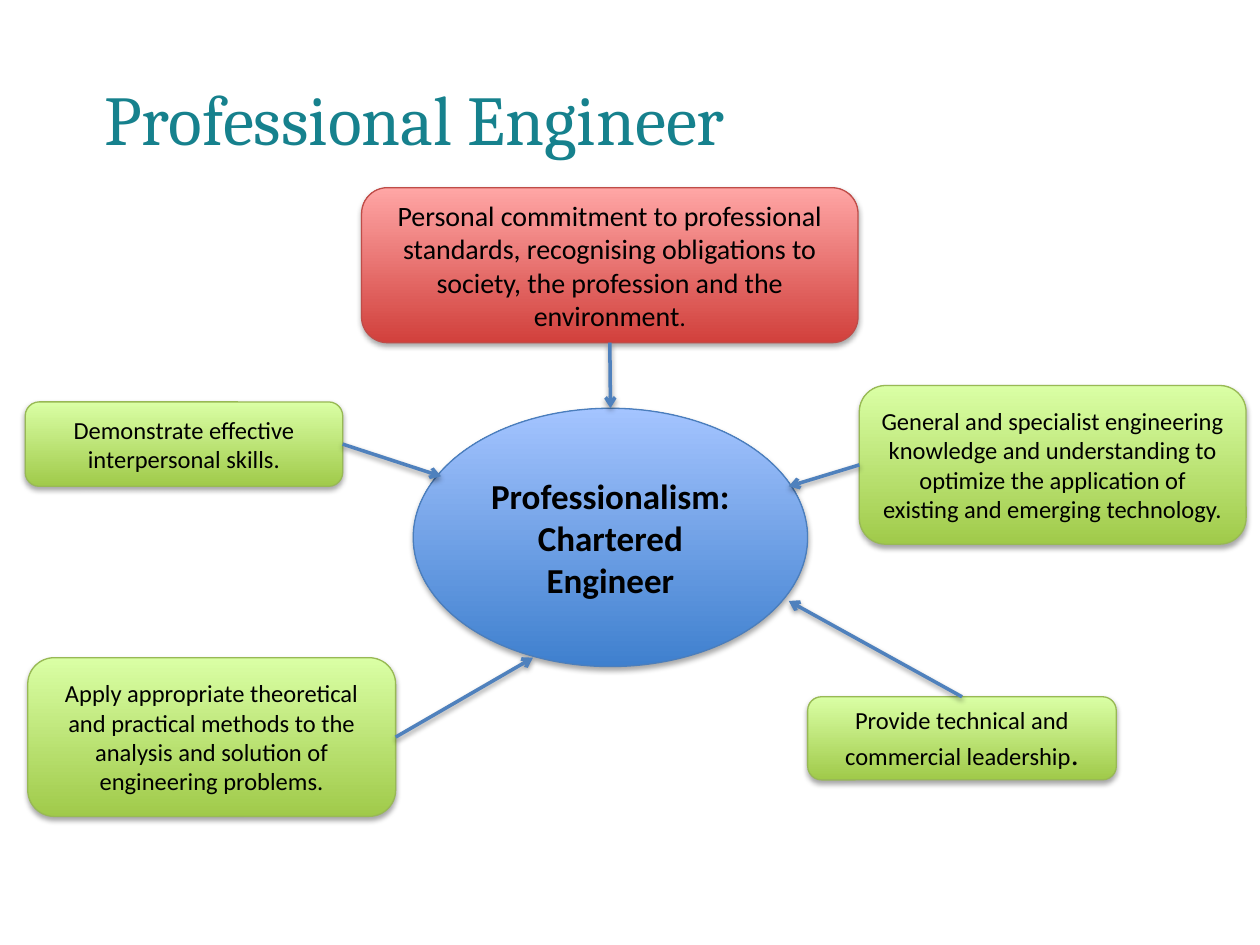
"""Build a slide showing the competences around a chartered engineer."""
from dataclasses import dataclass

from lxml import etree
from pptx import Presentation
from pptx.dml.color import RGBColor
from pptx.enum.shapes import MSO_CONNECTOR, MSO_SHAPE
from pptx.enum.text import MSO_ANCHOR, MSO_AUTO_SIZE, PP_ALIGN
from pptx.oxml.ns import qn
from pptx.shapes.autoshape import Shape
from pptx.slide import Slide
from pptx.util import Inches, Pt

OVAL, ROUNDED = MSO_SHAPE.OVAL, MSO_SHAPE.ROUNDED_RECTANGLE
STRAIGHT = MSO_CONNECTOR.STRAIGHT
TOP, MIDDLE = MSO_ANCHOR.TOP, MSO_ANCHOR.MIDDLE
LEFT, CENTER = PP_ALIGN.LEFT, PP_ALIGN.CENTER
NO_FIT = MSO_AUTO_SIZE.NONE
TITLE_ONLY = 5
SIDE_TOP, SIDE_LEFT, SIDE_BOTTOM, SIDE_RIGHT = range(4)


@dataclass(frozen=True)
class Palette:
    """Gradient from bottom to top, and outline."""
    bottom: str
    top: str
    outline: str


@dataclass(frozen=True)
class Theme:
    """Colours, fonts and type sizes of the slide."""
    blue: Palette = Palette("3F80CE", "A4C4FF", "4B7EBC")
    green: Palette = Palette("A0CA4A", "DAFFA5", "98B955")
    red: Palette = Palette("D1403C", "FFA6A5", "BF4C48")
    title: str = "16818D"
    text: str = "000000"
    arrow: str = "4F81BD"
    shadow: str = "000000"
    title_font: str = "Cambria"
    body_font: str = "Calibri"
    title_size: int = 40
    hub_size: int = 20
    commitment_size: int = 16
    large_stop_size: int = 18
    skill_size: int = 14


THEME = Theme()


@dataclass(frozen=True)
class Bubble:
    """A filled shape with centred text and an optional differently sized full stop."""
    text: str
    box: tuple[float, float, float, float]
    palette: Palette = THEME.green
    size: int = THEME.skill_size
    geometry: MSO_SHAPE = ROUNDED
    bold: bool = False
    stop_size: int | None = None


@dataclass(frozen=True)
class Competence:
    """A bubble and the arrow that leads from its side to the hub."""
    bubble: Bubble
    side: int
    target: tuple[float, float]


HUB = Bubble("Professionalism: Chartered Engineer", (3.28, 3.24, 3.13, 2.05),
             THEME.blue, THEME.hub_size, OVAL, bold=True)
COMMITMENT = Bubble(
    "Personal commitment to professional standards, recognising obligations "
    "to society, the profession and the environment",
    (2.87, 1.49, 3.94, 1.23), THEME.red, THEME.commitment_size,
    stop_size=THEME.skill_size)
COMPETENCES = [
    Competence(Bubble(
        "General and specialist engineering knowledge and understanding to "
        "optimize the application of existing and emerging technology.",
        (6.82, 3.06, 3.07, 1.26)), SIDE_LEFT, (6.26, 3.86)),
    Competence(Bubble(
        "Apply appropriate theoretical and practical methods to the analysis "
        "and solution of engineering problems.",
        (0.22, 5.22, 2.92, 1.26)), SIDE_RIGHT, (4.23, 5.22)),
    Competence(Bubble(
        "Provide technical and commercial leadership", (6.41, 5.53, 2.45, 0.66),
        stop_size=THEME.large_stop_size), SIDE_TOP, (6.26, 4.77)),
    Competence(Bubble(
        "Demonstrate effective interpersonal skills.", (0.2, 3.19, 2.52, 0.67)),
        SIDE_RIGHT, (3.5, 3.78)),
]


def rgb(code: str) -> RGBColor:
    """Turn a hexadecimal code into a colour."""
    return RGBColor.from_string(code)


def add_shadow(properties: etree._Element, distance: float, opacity: int) -> None:
    """Give a shape or connector a soft shadow below it."""
    effects = etree.SubElement(properties, qn("a:effectLst"))
    outer = etree.SubElement(effects, qn("a:outerShdw"), blurRad=str(Pt(3.15)),
                             dist=str(Pt(distance)), dir="5400000", rotWithShape="0")
    color = etree.SubElement(outer, qn("a:srgbClr"), val=THEME.shadow)
    etree.SubElement(color, qn("a:alpha"), val=str(opacity * 1000))


def draw_title(slide: Slide, text: str) -> None:
    """Place and format the slide title."""
    title = slide.shapes.title
    title.left, title.top = Inches(0.83), Inches(0.68)
    title.width, title.height = Inches(7.13), Inches(0.69)
    frame = title.text_frame
    frame.text = text
    frame.margin_left = frame.margin_right = frame.margin_top = frame.margin_bottom = 0
    frame.vertical_anchor, frame.auto_size = TOP, NO_FIT
    paragraph = frame.paragraphs[0]
    paragraph.alignment, paragraph.line_spacing = LEFT, Pt(42)
    paragraph.font.name, paragraph.font.size = THEME.title_font, Pt(THEME.title_size)
    paragraph.font.color.rgb = rgb(THEME.title)


def draw_bubble(slide: Slide, bubble: Bubble) -> Shape:
    """Draw a gradient bubble with its text."""
    shape = slide.shapes.add_shape(bubble.geometry, *map(Inches, bubble.box))
    shape.fill.gradient()
    shape.fill.gradient_angle = 90
    bottom, top = shape.fill.gradient_stops
    bottom.color.rgb, bottom.position = rgb(bubble.palette.bottom), 0
    top.color.rgb, top.position = rgb(bubble.palette.top), 1
    shape.line.color.rgb, shape.line.width = rgb(bubble.palette.outline), Pt(0.75)
    add_shadow(shape._element.spPr, 1.8, 35)

    frame = shape.text_frame
    frame.word_wrap, frame.vertical_anchor = True, MIDDLE
    paragraph = frame.paragraphs[0]
    paragraph.alignment = CENTER
    font = paragraph.font
    font.name, font.size, font.bold = THEME.body_font, Pt(bubble.size), bubble.bold
    font.color.rgb = rgb(THEME.text)
    paragraph.add_run().text = bubble.text
    if bubble.stop_size:
        stop = paragraph.add_run()
        stop.text, stop.font.size = ".", Pt(bubble.stop_size)
    return shape


def draw_arrow(slide: Slide, source: Shape, side: int, target: tuple[float, float],
               hub: Shape | None = None) -> None:
    """Draw an arrow from a bubble's side to a point, or to the top of the hub."""
    end = tuple(map(Inches, target))
    arrow = slide.shapes.add_connector(STRAIGHT, *end, *end)
    arrow.begin_connect(source, side)
    if hub:
        arrow.end_connect(hub, SIDE_TOP)
    arrow.line.color.rgb, arrow.line.width = rgb(THEME.arrow), Pt(2)
    properties = arrow._element.spPr
    etree.SubElement(properties.find(qn("a:ln")), qn("a:tailEnd"), type="arrow")
    add_shadow(properties, 1.6, 38)


def main() -> None:
    """Build and save the slide."""
    deck = Presentation()
    deck.slide_width, deck.slide_height = Inches(10), Inches(7.5)
    slide = deck.slides.add_slide(deck.slide_layouts[TITLE_ONLY])
    draw_title(slide, "Professional Engineer")
    hub = draw_bubble(slide, HUB)
    skills = [draw_bubble(slide, competence.bubble) for competence in COMPETENCES]
    commitment = draw_bubble(slide, COMMITMENT)
    draw_arrow(slide, commitment, SIDE_BOTTOM, (4.84, 3.24), hub)
    for competence, skill in zip(COMPETENCES, skills):
        draw_arrow(slide, skill, competence.side, competence.target)
    deck.save("out.pptx")


if __name__ == "__main__":
    main()
